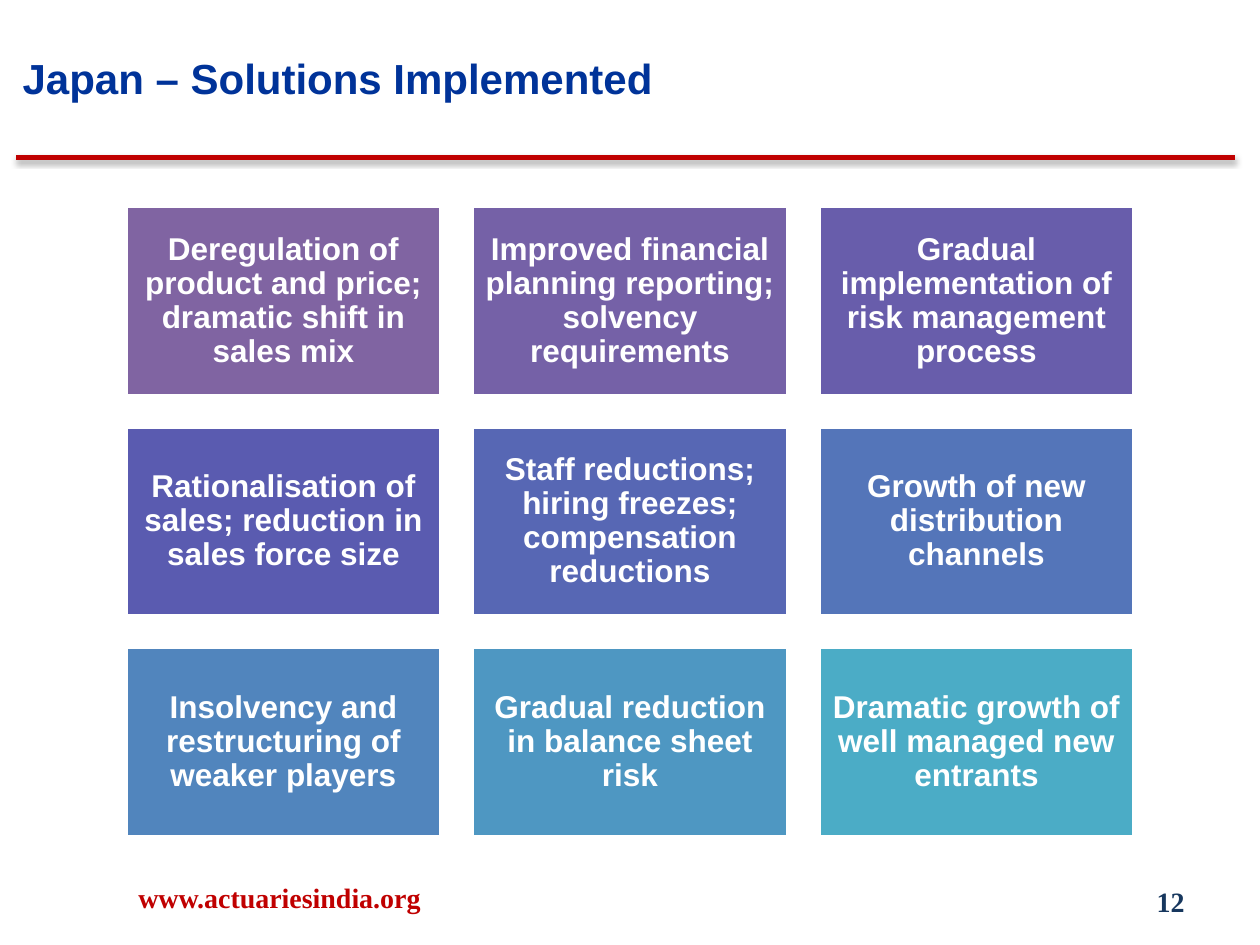
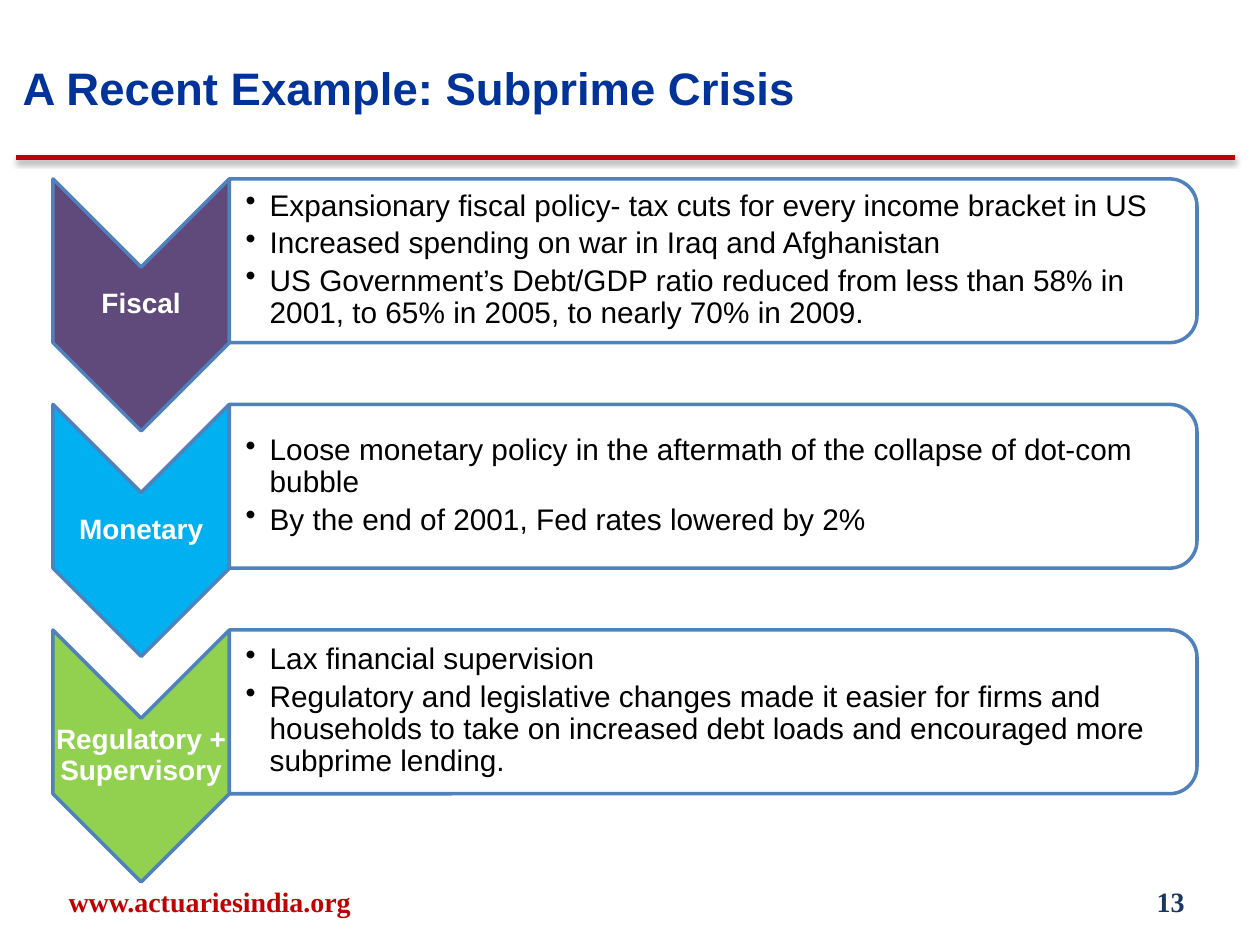
from pptx import Presentation
from pptx.dml.color import RGBColor
from pptx.enum.shapes import MSO_CONNECTOR, MSO_SHAPE
from pptx.enum.text import MSO_ANCHOR, MSO_AUTO_SIZE, PP_ALIGN
from pptx.oxml import parse_xml
from pptx.oxml.ns import nsdecls
from pptx.util import Inches, Pt

RED, NAVY, BLUE, WHITE, BLACK = "C00000", "17375E", "003399", "FFFFFF", "000000"
OUTLINE = "4F81BD"
SANS, SERIF = "Arial", "Times New Roman"
SITE = "www.actuariesindia.org"

SOLUTIONS = [
    ("Deregulation of product and price; dramatic shift in sales mix", "8064A2"),
    ("Improved financial planning reporting; solvency requirements", "7561A7"),
    ("Gradual implementation of risk management process", "685DAB"),
    ("Rationalisation of sales; reduction in sales force size", "5A5BB0"),
    ("Staff reductions; hiring freezes; compensation reductions", "5767B4"),
    ("Growth of new distribution channels", "5475B9"),
    ("Insolvency and restructuring of weaker players", "5185BD"),
    ("Gradual reduction in balance sheet risk", "4E97C2"),
    ("Dramatic growth of well managed new entrants", "4BACC6"),
]

CAUSES = [
    ("Fiscal", "604A7B", [
        "Expansionary fiscal policy- tax cuts for every income bracket in US",
        "Increased spending on war in Iraq and Afghanistan",
        "US Government’s Debt/GDP ratio reduced from less than 58% in 2001, "
        "to 65% in 2005, to nearly 70% in 2009.",
    ]),
    ("Monetary", "00B0F0", [
        "Loose monetary policy in the aftermath of the collapse of dot-com bubble",
        "By the end of 2001, Fed rates lowered by 2%",
    ]),
    ("Regulatory + Supervisory", "92D050", [
        "Lax financial supervision",
        "Regulatory and legislative changes made it easier for firms and households "
        "to take on increased debt loads and encouraged more subprime lending.",
    ]),
]


def rgb(color):
    return RGBColor.from_string(color)


def box(left, top, width, height):
    return [Inches(v) for v in (left, top, width, height)]


def set_frame(tf, anchor, left=0.1, rest=0.05):
    tf.word_wrap = True
    tf.auto_size = MSO_AUTO_SIZE.NONE
    tf.vertical_anchor = anchor
    tf.margin_left = Inches(left)
    tf.margin_right = Inches(rest)
    tf.margin_top = tf.margin_bottom = Inches(rest)


def write(p, text, size, color, font=SANS, bold=True, align=PP_ALIGN.LEFT, spacing=1.0):
    p.alignment = align
    p.line_spacing = spacing
    r = p.add_run()
    r.text = text
    r.font.name = font
    r.font.size = Pt(size)
    r.font.bold = bold
    r.font.color.rgb = rgb(color)


def add_text(s, place, text, size, color, font=SANS, align=PP_ALIGN.LEFT, inset=0.1, spacing=1.0):
    tf = s.shapes.add_textbox(*box(*place)).text_frame
    set_frame(tf, MSO_ANCHOR.MIDDLE, inset, inset)
    write(tf.paragraphs[0], text, size, color, font, align=align, spacing=spacing)


def add_block(s, kind, place, fill, line):
    sp = s.shapes.add_shape(kind, *box(*place))
    sp.shadow.inherit = False
    sp.fill.solid()
    sp.fill.fore_color.rgb = rgb(fill)
    sp.line.color.rgb = rgb(line)
    sp.line.width = Pt(2)
    return sp


def add_upright(s, kind, place, fill):
    left, top, width, height = place
    turned = (left + (width - height) / 2, top + (height - width) / 2, height, width)
    add_block(s, kind, turned, fill, OUTLINE).rotation = 90


def add_rule(s):
    rule = s.shapes.add_connector(MSO_CONNECTOR.STRAIGHT, *box(0.13, 1.25, 9.8, 1.25))
    rule.line.color.rgb = rgb(RED)
    rule.line.width = Pt(3)
    rule._element.spPr.append(parse_xml(
        f'<a:effectLst {nsdecls("a")}><a:outerShdw blurRad="39370" dist="20320" '
        'dir="5400000" rotWithShape="0"><a:srgbClr val="000000"><a:alpha val="38000"/>'
        '</a:srgbClr></a:outerShdw></a:effectLst>'))


def add_slide(prs, title, title_top, title_size, number, site_place, site_align):
    s = prs.slides.add_slide(prs.slide_layouts[5])
    add_rule(s)
    sp = s.shapes.title
    sp.left, sp.top, sp.width, sp.height = box(0.08, title_top, 8.92, 0.67)
    set_frame(sp.text_frame, MSO_ANCHOR.TOP)
    write(sp.text_frame.paragraphs[0], title, title_size, BLUE)
    add_text(s, site_place, SITE, 16, RED, SERIF, site_align)
    add_text(s, (7.17, 6.95, 2.33, 0.4), number, 16, NAVY, SERIF, PP_ALIGN.RIGHT)
    return s


def add_solutions(s, columns=3, width=2.5, height=1.5, gap=0.25):
    for i, (text, fill) in enumerate(SOLUTIONS):
        row, col = divmod(i, columns)
        place = (1 + col * (width + gap), 1.64 + row * (height + gap), width, height)
        tf = add_block(s, MSO_SHAPE.RECTANGLE, place, fill, WHITE).text_frame
        set_frame(tf, MSO_ANCHOR.MIDDLE, 0.07, 0.07)
        write(tf.paragraphs[0], text, 18, WHITE, align=PP_ALIGN.CENTER, spacing=0.9)


def add_bullets(s, place, items):
    tf = s.shapes.add_textbox(*box(*place)).text_frame
    set_frame(tf, MSO_ANCHOR.MIDDLE, 0.13, 0.01)
    for i, item in enumerate(items):
        p = tf.add_paragraph() if i else tf.paragraphs[0]
        pPr = p._p.get_or_add_pPr()
        pPr.set("marL", str(Inches(0.19)))
        pPr.set("indent", str(-Inches(0.19)))
        pPr.append(parse_xml(f'<a:buChar {nsdecls("a")} char="•"/>'))
        p.space_after = Pt(3)
        write(p, item, 17, BLACK, bold=False, spacing=0.9)


def add_causes(s, left=0.42, width=1.4, pitch=1.79):
    panel_left = left + width
    for i, (label, fill, items) in enumerate(CAUSES):
        top = 1.42 + i * pitch
        add_upright(s, MSO_SHAPE.CHEVRON, (left, top, width, 2), fill)
        add_text(s, (left, top + 0.7, width, 0.6), label, 16, WHITE,
                 align=PP_ALIGN.CENTER, inset=0.01, spacing=0.9)
        add_upright(s, MSO_SHAPE.ROUND_2_SAME_RECTANGLE, (panel_left, top, 7.68, 1.3), WHITE)
        add_bullets(s, (panel_left, top + 0.06, 7.62, 1.17), items)


def main():
    prs = Presentation()
    prs.slide_width, prs.slide_height = Inches(10), Inches(7.5)
    add_solutions(add_slide(prs, "Japan – Solutions Implemented", 0.37, 24, "12",
                            (1, 6.92, 3.17, 0.4), PP_ALIGN.LEFT))
    add_causes(add_slide(prs, "A Recent Example: Subprime Crisis", 0.43, 26, "13",
                         (0.08, 6.95, 3.17, 0.4), PP_ALIGN.CENTER))
    prs.save("out.pptx")


if __name__ == "__main__":
    main()
